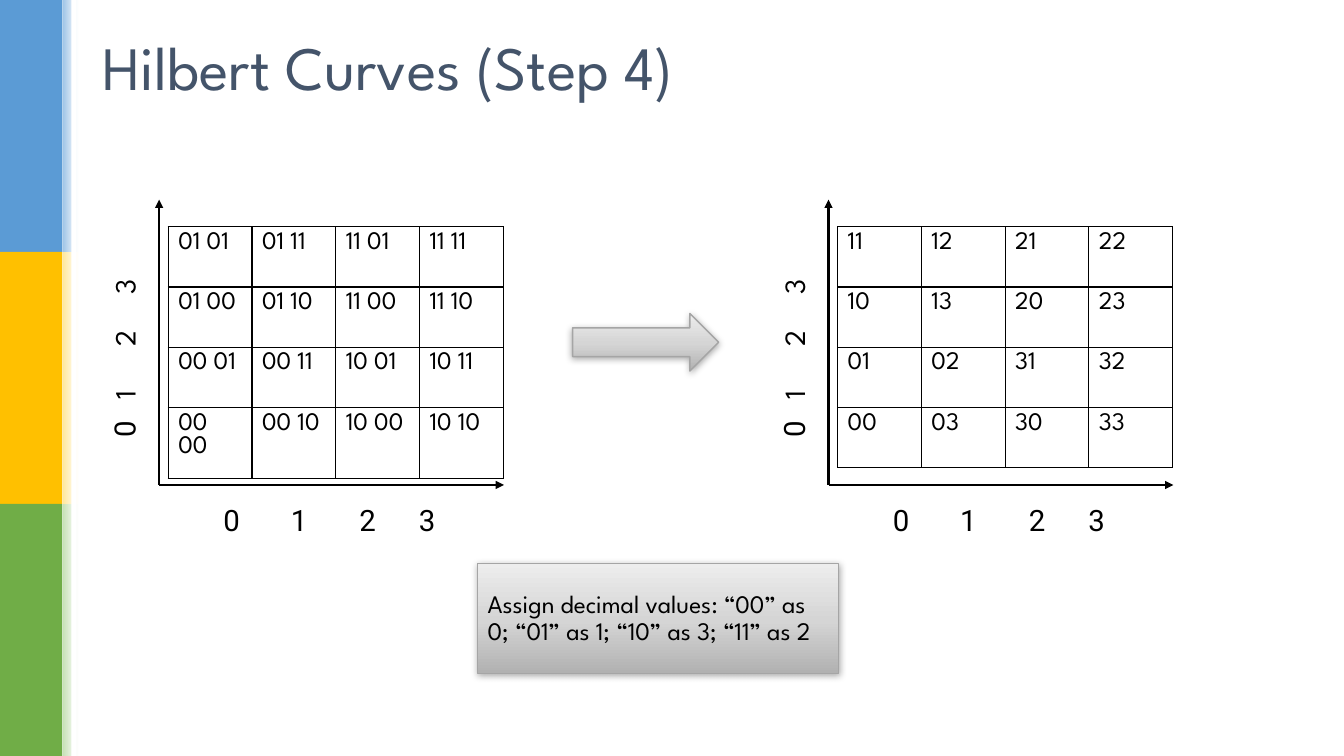
from dataclasses import dataclass

from lxml import etree
from pptx import Presentation
from pptx import util as u
from pptx.dml.color import RGBColor
from pptx.enum import shapes, text
from pptx.oxml import parse_xml
from pptx.oxml.ns import nsdecls, qn

COLORS = {
    "black": "000000", "white": "FFFFFF", "title": "44546A", "outline": "A5A5A5",
    "blue": "5B9BD5", "gold": "FFC000", "green": "70AD47",
    "pale_blue": "9DC3E6", "pale_gold": "FFE699", "pale_green": "C5E0B4",
    "steel_dark": "B1B1B1", "steel_mid": "D5D5D5", "steel_light": "EDEDED",
}
MAIN_FONT, DIGIT_FONT = "League Spartan", "Roboto"
BODY = {"name": MAIN_FONT, "size": u.Pt(18), "bold": False}
STEEL = ((0, "steel_dark"), (48, "steel_mid"), (100, "steel_light"))
COL_W, ROW_H = 2.11, 1.52


@dataclass
class Box:
    left: float
    top: float
    width: float
    height: float

    def emu(self) -> tuple:
        return tuple(u.Cm(v) for v in (self.left, self.top, self.width, self.height))


@dataclass
class AxisLabels:
    box: Box
    rotation: int
    tabs: tuple
    runs: tuple


@dataclass
class CurveGrid:
    shift: float
    codes: tuple


GRIDS = (
    CurveGrid(16.87, ("11 12 21 22".split(), "10 13 20 23".split(),
                      "01 02 31 32".split(), "00 03 30 33".split())),
    CurveGrid(0, (("01 01", "01 11", "11 01", "11 11"),
                  ("01 00", "01 10", "11 00", "11 10"),
                  ("00 01", "00 11", "10 01", "10 11"),
                  ("00 00", "00 10", "10 00", "10 10"))),
)
AXIS_LABELS = (
    AxisLabels(Box(5.38, 12.52, 6.78, 1.27), 0, (1.7, 3.43, 4.93),
               (("0\t1\t2\t3", DIGIT_FONT),)),
    AxisLabels(Box(-0.2, 8.2, 6.78, 1.27), 270, (0.94, 1.92, 3.24, 4.56),
               (("\t0", DIGIT_FONT), ("\t1\t2\t3", MAIN_FONT))),
)


def rgb(name: str) -> RGBColor:
    return RGBColor.from_string(COLORS[name])


def add_text(p, words: str, fmt: dict, color: str = "black") -> None:
    r = p.add_run()
    r.text = words
    for key, value in fmt.items():
        setattr(r.font, key, value)
    r.font.color.rgb = rgb(color)


def set_gradient(sp, stops: tuple, angle: int) -> None:
    sp.fill.gradient()
    sp.fill.gradient_angle = angle
    stop_list = next(sp._element.spPr.iter(qn("a:gsLst")))
    for old in list(stop_list):
        stop_list.remove(old)
    for pos, color in stops:
        stop = etree.SubElement(stop_list, qn("a:gs"), pos=str(pos * 1000))
        etree.SubElement(stop, qn("a:srgbClr"), val=COLORS[color])


def add_panel(slide, box: Box, fill: str = "white", kind=shapes.MSO_SHAPE.RECTANGLE):
    sp = slide.shapes.add_shape(kind, *box.emu())
    sp.shadow.inherit = False
    sp.fill.solid()
    sp.fill.fore_color.rgb = rgb(fill)
    sp.line.fill.background()
    return sp


def add_steel(slide, box: Box, kind):
    """Add a grey gradient shape with a soft shadow below it."""
    sp = add_panel(slide, box, kind=kind)
    set_gradient(sp, STEEL, 90)
    sp.line.color.rgb = rgb("outline")
    sp.line.width = u.Pt(1)
    effects = sp._element.spPr.find(qn("a:effectLst"))
    effects.append(parse_xml(
        f'<a:outerShdw {nsdecls("a")} blurRad="{u.Pt(5)}" dist="{u.Pt(1)}" dir="5400000" '
        f'rotWithShape="0"><a:srgbClr val="{COLORS["black"]}"><a:alpha val="32000"/>'
        '</a:srgbClr></a:outerShdw>'))
    return sp


def add_sidebar(slide) -> None:
    height = 6.35
    for i, hue in enumerate(("blue", "gold", "green")):
        add_panel(slide, Box(0, i * height, 1.57, height), hue)
        fade = add_panel(slide, Box(1.57, i * height, 0.41, height))
        set_gradient(fade, ((0, "pale_" + hue), (100, "white")), 0)
    add_panel(slide, Box(1.8, 0, 0.13, 3 * height))


def add_title(slide) -> None:
    tf = slide.shapes.add_textbox(*Box(2.34, 0.38, 29.21, 2.79).emu()).text_frame
    tf.word_wrap = True
    tf.vertical_anchor = text.MSO_ANCHOR.MIDDLE
    p = tf.paragraphs[0]
    p.line_spacing = 0.9
    add_text(p, "Hilbert Curves (Step 4)", {"name": MAIN_FONT, "size": u.Pt(44)}, "title")


def set_borders(cell) -> None:
    props = cell._tc.get_or_add_tcPr()
    for i, side in enumerate("LRTB"):
        props.insert(i, parse_xml(
            f'<a:ln{side} {nsdecls("a")} w="{u.Pt(1)}"><a:solidFill>'
            f'<a:srgbClr val="{COLORS["black"]}"/></a:solidFill></a:ln{side}>'))


def add_code_table(slide, grid: CurveGrid) -> None:
    rows, cols = len(grid.codes), len(grid.codes[0])
    box = Box(4.24 + grid.shift, 5.71, cols * COL_W, rows * ROW_H)
    table = slide.shapes.add_table(rows, cols, *box.emu()).table
    table.first_row = table.horz_banding = False
    for column in table.columns:
        column.width = u.Cm(COL_W)
    for row, codes in zip(table.rows, grid.codes):
        row.height = u.Cm(ROW_H)
        for cell, code in zip(row.cells, codes):
            cell.fill.solid()
            cell.fill.fore_color.rgb = rgb("white")
            set_borders(cell)
            add_text(cell.text_frame.paragraphs[0], code, BODY)


def add_axis(slide, shift: float, end_x: float, end_y: float) -> None:
    points = (u.Cm(v) for v in (4.01 + shift, 12.22, end_x + shift, end_y))
    axis = slide.shapes.add_connector(shapes.MSO_CONNECTOR.STRAIGHT, *points)
    axis.line.color.rgb = rgb("black")
    axis.line.width = u.Pt(1.75)
    etree.SubElement(axis.line._get_or_add_ln(), qn("a:tailEnd"), type="triangle")
    etree.SubElement(axis._element.spPr, qn("a:effectLst"))


def add_axis_labels(slide, labels: AxisLabels, shift: float) -> None:
    b = labels.box
    sp = add_panel(slide, Box(b.left + shift, b.top, b.width, b.height))
    sp.rotation = labels.rotation
    tf = sp.text_frame
    tf.word_wrap = True
    tf.vertical_anchor = text.MSO_ANCHOR.TOP
    p = tf.paragraphs[0]
    p.alignment = text.PP_ALIGN.LEFT
    tab_list = etree.SubElement(p._p.get_or_add_pPr(), qn("a:tabLst"))
    for pos in labels.tabs:
        etree.SubElement(tab_list, qn("a:tab"), pos=str(u.Cm(pos)), algn="l")
    for words, font in labels.runs:
        add_text(p, words, {"name": font, "size": u.Pt(21)})


def add_note(slide) -> None:
    sp = add_steel(slide, Box(12.04, 14.2, 9.09, 2.77), shapes.MSO_SHAPE.RECTANGLE)
    tf = sp.text_frame
    tf.word_wrap = True
    tf.vertical_anchor = text.MSO_ANCHOR.MIDDLE
    p = tf.paragraphs[0]
    fmt = {"alignment": text.PP_ALIGN.LEFT, "line_spacing": 0.9, "space_after": u.Pt(6)}
    for key, value in fmt.items():
        setattr(p, key, value)
    add_text(p, "Assign decimal values: “00” as 0; “01” as 1; “10” as 3; “11” as 2", BODY)


def main() -> None:
    prs = Presentation()
    prs.slide_width, prs.slide_height = u.Cm(33.87), u.Cm(19.05)
    slide = prs.slides.add_slide(prs.slide_layouts[6])
    add_sidebar(slide)
    add_title(slide)
    for grid in GRIDS:
        add_code_table(slide, grid)
        add_axis(slide, grid.shift, 12.7, 12.22)
        add_axis(slide, grid.shift, 4.01, 5.03)
        for labels in AXIS_LABELS:
            add_axis_labels(slide, labels, grid.shift)
    add_note(slide)
    add_steel(slide, Box(14.43, 7.9, 3.68, 1.45), shapes.MSO_SHAPE.RIGHT_ARROW)
    prs.save("out.pptx")


if __name__ == "__main__":
    main()
